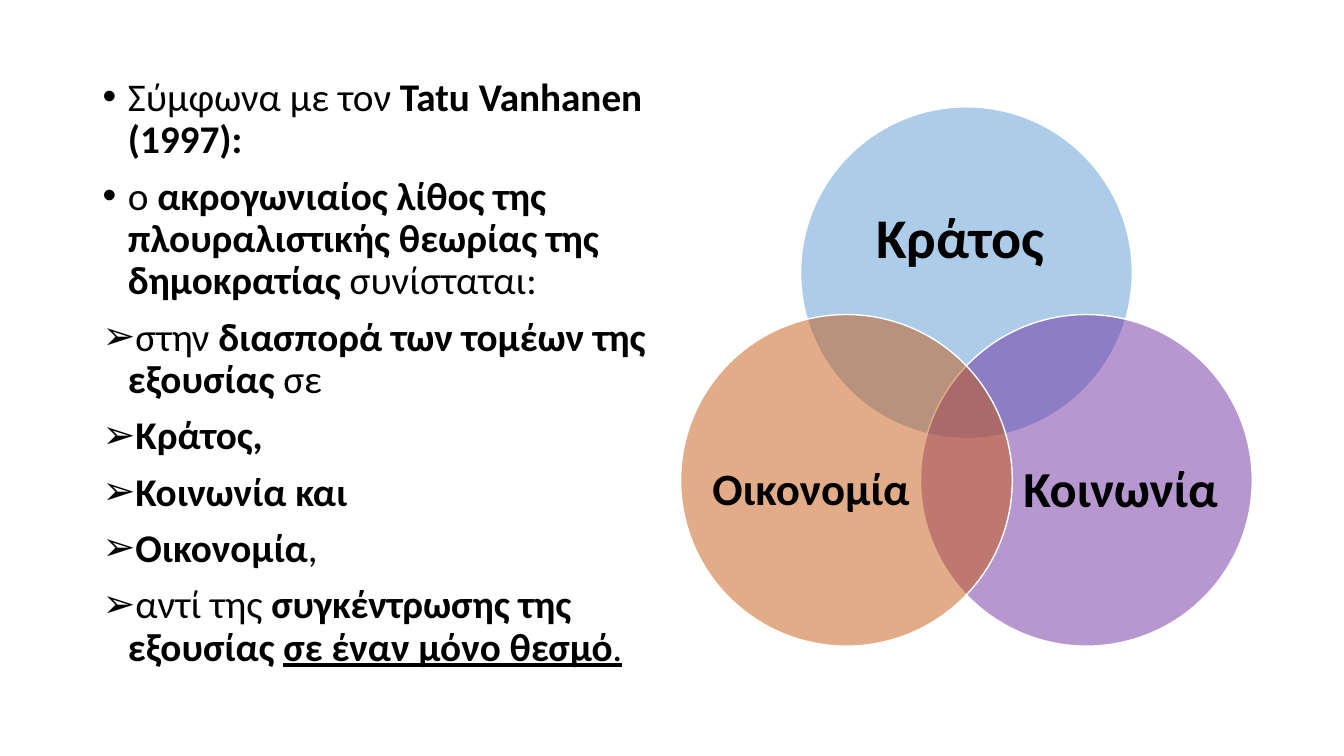
from lxml import etree
from pptx import Presentation
from pptx.dml.color import RGBColor
from pptx.enum.shapes import MSO_SHAPE
from pptx.enum.text import MSO_ANCHOR, PP_ALIGN
from pptx.oxml.ns import qn
from pptx.util import Pt

PX = 9144
OVAL = MSO_SHAPE.OVAL
MIDDLE = MSO_ANCHOR.MIDDLE
CENTER = PP_ALIGN.CENTER
FONT = "Calibri"
BLACK = RGBColor(0x00, 0x00, 0x00)
WHITE = RGBColor(0xFF, 0xFF, 0xFF)
BLUE = RGBColor(0x5B, 0x9B, 0xD5)
PURPLE = RGBColor(0x70, 0x30, 0xA0)
ORANGE = RGBColor(0xC5, 0x5A, 0x11)

DOT, ARROW = "•", "➢"
PLAIN, BOLD, UNDERLINED = (False, False), (True, False), (True, True)
POINTS = [
    (DOT, [("Σύμφωνα με τον ", PLAIN), ("Tatu Vanhanen (1997):", BOLD)]),
    (DOT, [("ο ", PLAIN),
           ("ακρογωνιαίος λίθος της πλουραλιστικής θεωρίας της δημοκρατίας", BOLD),
           (" συνίσταται:", PLAIN)]),
    (ARROW, [("στην ", PLAIN), ("διασπορά των τομέων της εξουσίας", BOLD),
             (" σε", PLAIN)]),
    (ARROW, [("Κράτος,", BOLD)]),
    (ARROW, [("Κοινωνία και", BOLD)]),
    (ARROW, [("Οικονομία", BOLD), (",", PLAIN)]),
    (ARROW, [("αντί της ", PLAIN), ("συγκέντρωσης της εξουσίας ", BOLD),
             ("σε έναν μόνο θεσμό", UNDERLINED), (".", (False, True))]),
]


def px(*lengths):
    return [length * PX for length in lengths]


def add_run(p, text, size, bold=False, underline=False):
    r = p.add_run()
    r.text = text
    r.font.name = FONT
    r.font.size = Pt(size)
    r.font.bold = bold
    r.font.underline = underline
    r.font.color.rgb = BLACK


def set_bullet(p, char, indent):
    pPr = p._p.get_or_add_pPr()
    pPr.set("marL", str(indent * PX))
    pPr.set("indent", str(-indent * PX))
    etree.SubElement(pPr, qn("a:buFont")).set("typeface", "Arial")
    etree.SubElement(pPr, qn("a:buChar")).set("char", char)


def add_points(slide, x, y, w, h):
    tf = slide.shapes.add_textbox(*px(x, y, w, h)).text_frame
    tf.word_wrap = True
    for i, (char, runs) in enumerate(POINTS):
        p = tf.add_paragraph() if i else tf.paragraphs[0]
        p.line_spacing = 0.9
        p.space_before = Pt(10)
        set_bullet(p, char, 25)
        for text, style in runs:
            add_run(p, text, 28, *style)


def add_circle(shapes, x, y, diameter, color):
    sp = shapes.add_shape(OVAL, *px(x, y, diameter, diameter))
    sp.shadow.inherit = False
    sp.fill.solid()
    sp.fill.fore_color.rgb = color
    clr = sp.fill._xPr.find(qn("a:solidFill"))[0]
    etree.SubElement(clr, qn("a:alpha")).set("val", "50000")
    sp.line.color.rgb = WHITE
    sp.line.width = Pt(1)


def add_label(shapes, x, y, w, h, text, size):
    tf = shapes.add_textbox(*px(x, y, w, h)).text_frame
    tf.word_wrap = True
    tf.vertical_anchor = MIDDLE
    tf.margin_left = tf.margin_right = tf.margin_top = tf.margin_bottom = 0
    p = tf.paragraphs[0]
    p.alignment = CENTER
    p.line_spacing = 0.9
    add_run(p, text, size, bold=True)


def add_venn(slide, x, y, w, h):
    shapes = slide.shapes.add_group_shape().shapes
    diameter = 329
    right, low = x + w - diameter, y + h - diameter
    middle = (x + right) // 2
    circles = [
        (middle, y, BLUE, (44, 58, 241, 148), "Κράτος ", 40),
        (right, low, PURPLE, (100, 85, 197, 181), "Κοινωνία", 36),
        (x, low, ORANGE, (31, 85, 197, 181), "Οικονομία", 32),
    ]
    for left, top, color, (dx, dy, lw, lh), text, size in circles:
        add_circle(shapes, left, top, diameter, color)
        add_label(shapes, left + dx, top + dy, lw, lh, text, size)


def main():
    prs = Presentation()
    prs.slide_width, prs.slide_height = px(1333, 750)
    slide = prs.slides.add_slide(prs.slide_layouts[6])
    add_points(slide, 92, 72, 567, 604)
    add_venn(slide, 675, 106, 567, 535)
    prs.save("out.pptx")


if __name__ == "__main__":
    main()
